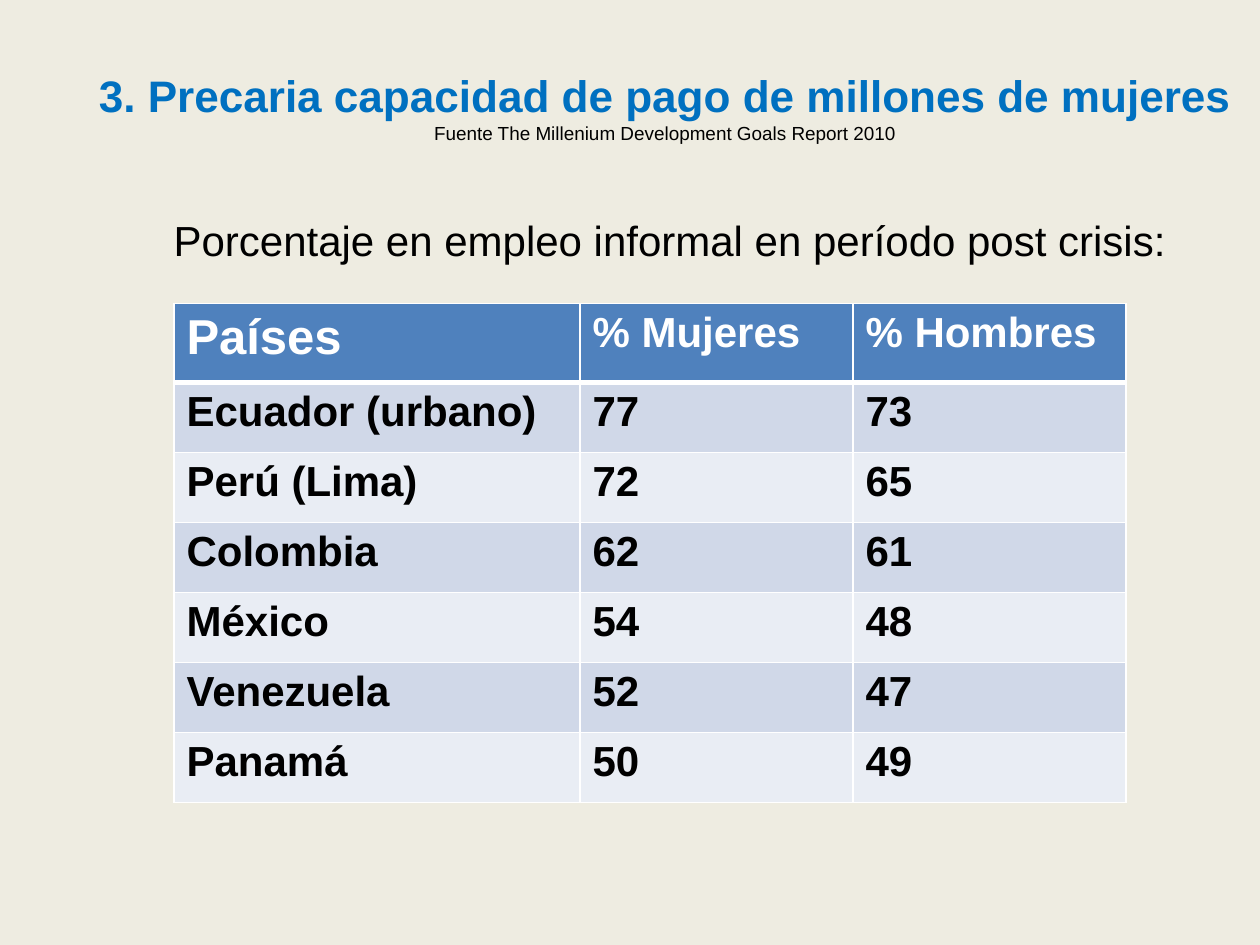
from lxml.etree import SubElement
from pptx import Presentation
from pptx.dml.color import RGBColor
from pptx.enum.text import MSO_ANCHOR, MSO_AUTO_SIZE, PP_ALIGN
from pptx.oxml.ns import qn
from pptx.util import Pt

COLORS = {
    "background": "EEECE1",
    "title": "0070C0",
    "text": "000000",
    "header": "4F81BD",
    "header_text": "FFFFFF",
    "odd_row": "D0D8E8",
    "even_row": "E9EDF4",
    "border": "FFFFFF",
}

COUNTRIES = [
    ("Países", "% Mujeres", "% Hombres"),
    ("Ecuador (urbano)", "77", "73"),
    ("Perú (Lima)", "72", "65"),
    ("Colombia", "62", "61"),
    ("México", "54", "48"),
    ("Venezuela", "52", "47"),
    ("Panamá", "50", "49"),
]


def set_values(target, values):
    for name, value in values.items():
        setattr(target, name, value)


def add_run(paragraph, text, size, color, bold=False):
    run = paragraph.add_run()
    run.text = text
    set_values(run.font, {"name": "Arial", "size": Pt(size), "bold": bold})
    run.font.color.rgb = RGBColor.from_string(COLORS[color])


def place(shape, box):
    names = ("left", "top", "width", "height")
    set_values(shape, dict(zip(names, map(Pt, box))))


def fill_title(slide, box):
    title = slide.shapes.title
    place(title, box)
    set_values(title.text_frame, {
        "word_wrap": True,
        "auto_size": MSO_AUTO_SIZE.NONE,
        "vertical_anchor": MSO_ANCHOR.MIDDLE,
    })
    paragraph = title.text_frame.paragraphs[0]
    paragraph.alignment = PP_ALIGN.CENTER
    add_run(paragraph, "3. Precaria capacidad de pago de millones de mujeres", 25.2, "title", True)
    paragraph.add_line_break()
    add_run(paragraph, "Fuente The Millenium Development Goals Report 2010", 10.8, "text")


def add_introduction(slide, box):
    shape = slide.shapes.add_textbox(*map(Pt, box))
    set_values(shape.text_frame, {
        "word_wrap": True,
        "auto_size": MSO_AUTO_SIZE.NONE,
        "margin_left": Pt(27.2),
        "margin_top": Pt(6),
    })
    add_run(shape.text_frame.paragraphs[0],
            "Porcentaje en empleo informal en período post crisis:", 24, "text")


def set_borders(cell, widths):
    properties = cell._tc.get_or_add_tcPr()
    for side, width in widths.items():
        line = SubElement(properties, qn(f"a:ln{side}"), w=str(Pt(width)))
        fill = SubElement(line, qn("a:solidFill"))
        SubElement(fill, qn("a:srgbClr"), val=COLORS["border"])


def add_employment_table(slide, box, column_widths, header_height):
    row_count = len(COUNTRIES)
    row_height = (box[3] - header_height) / (row_count - 1)
    table = slide.shapes.add_table(row_count, len(column_widths), *map(Pt, box)).table
    for column, width in zip(table.columns, column_widths):
        column.width = Pt(width)
    for row_index, values in enumerate(COUNTRIES):
        is_header = row_index == 0
        table.rows[row_index].height = Pt(header_height if is_header else row_height)
        row_color = "header" if is_header else ("even_row", "odd_row")[row_index % 2]
        borders = {"L": 1, "R": 1, "T": 3 if row_index == 1 else 1, "B": 3 if is_header else 1}
        for column_index, text in enumerate(values):
            cell = table.cell(row_index, column_index)
            set_borders(cell, borders)
            cell.fill.solid()
            cell.fill.fore_color.rgb = RGBColor.from_string(COLORS[row_color])
            add_run(cell.text_frame.paragraphs[0], text,
                    28 if is_header and column_index == 0 else 24,
                    "header_text" if is_header else "text", True)


def main():
    presentation = Presentation()
    set_values(presentation, {"slide_width": Pt(720), "slide_height": Pt(540)})
    slide = presentation.slides.add_slide(presentation.slide_layouts[5])
    slide.background.fill.solid()
    slide.background.fill.fore_color.rgb = RGBColor.from_string(COLORS["background"])
    fill_title(slide, (20, 21.6, 720, 78.5))
    add_introduction(slide, (72, 116.6, 648, 394))
    add_employment_table(slide, (99.4, 173.5, 544, 285), (232, 156, 156), 45)
    presentation.save("out.pptx")


if __name__ == "__main__":
    main()
